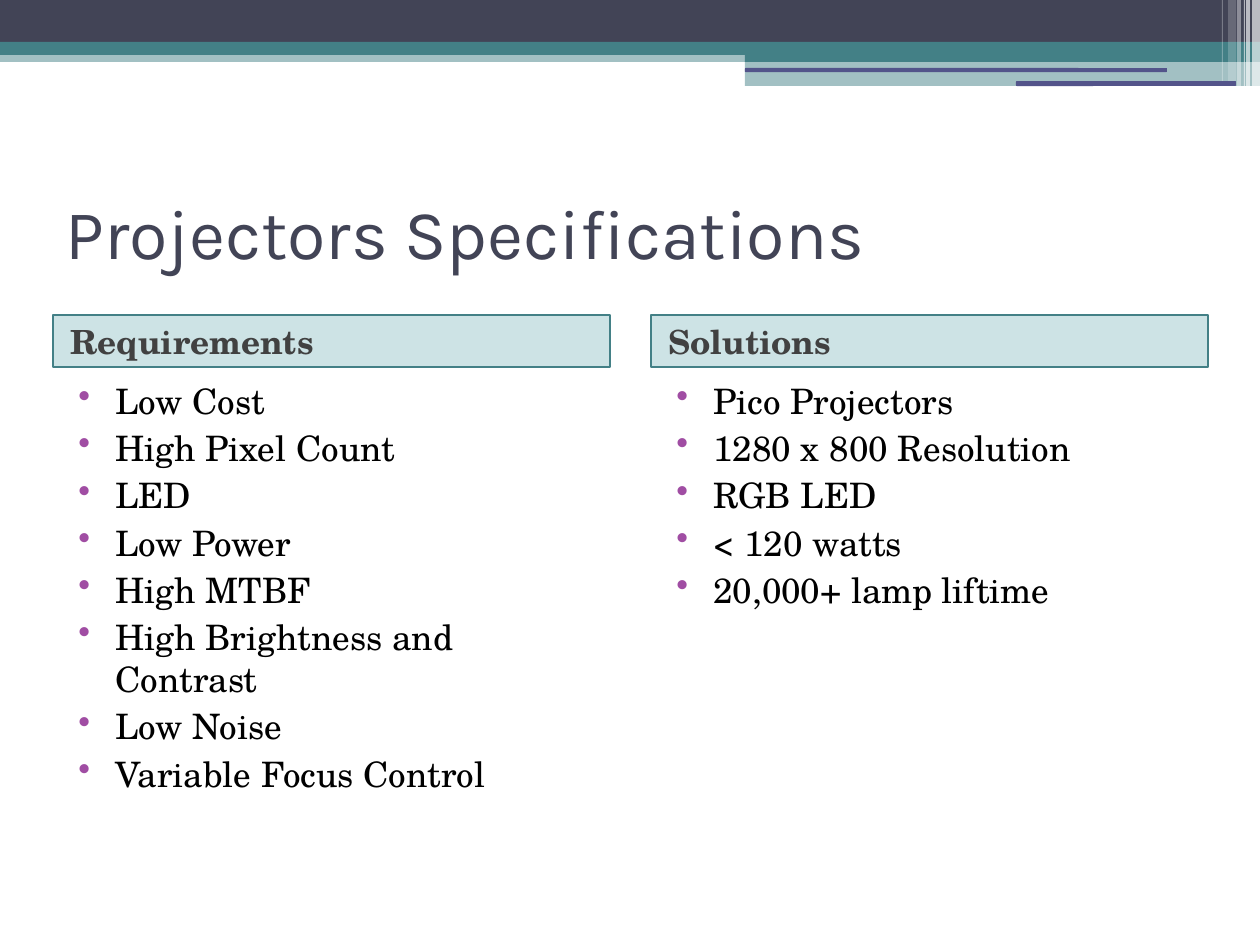
from dataclasses import dataclass

from lxml import etree
from pptx import Presentation, util as u
from pptx.dml.color import RGBColor
from pptx.enum import shapes, text
from pptx.oxml.ns import qn

PX = 914400 / 126
TEAL, NAVY, INDIGO, WHITE = "438086", "424456", "53548A", "FFFFFF"
SERIF = "TeX Gyre Schola"
COLUMN_W = 557


@dataclass
class Bar:
    x: int
    y: int
    w: int
    h: int
    color: str
    alpha: int = 100
    rounded: bool = False


@dataclass
class Column:
    x: int
    heading: str
    items: list[str]


@dataclass
class Style:
    size: int
    font: str
    color: str
    bold: bool = False


BARS = [
    Bar(0, 50, 1260, 12, TEAL, 49),
    Bar(0, 0, 1260, 43, NAVY),
    Bar(0, 42, 1260, 13, TEAL),
    Bar(745, 49, 515, 13, TEAL),
    Bar(745, 61, 515, 25, TEAL, 49),
    Bar(745, 68, 422, 4, INDIGO, rounded=True),
    Bar(1016, 81, 220, 5, INDIGO, rounded=True),
    Bar(1252, 0, 8, 86, WHITE, 64),
    Bar(1246, 0, 4, 86, WHITE, 64),
    Bar(1244, 0, 1, 86, WHITE, 60),
    Bar(1237, 0, 4, 86, WHITE, 40),
    Bar(1228, 0, 8, 81, WHITE, 20),
    Bar(1222, 0, 1, 81, WHITE, 29),
]

COLUMNS = [
    Column(53, "Requirements", [
        "Low Cost", "High Pixel Count", "LED", "Low Power", "High MTBF",
        "High Brightness and Contrast", "Low Noise", "Variable Focus Control",
    ]),
    Column(651, "Solutions", [
        "Pico Projectors", "1280 x 800 Resolution", "RGB LED",
        "< 120 watts", "20,000+ lamp liftime",
    ]),
]

TITLE = Style(40, "Karla", NAVY)
HEADING = Style(19, SERIF, "414141", True)
ITEM = Style(20, SERIF, "000000")


def px(n: int) -> u.Emu:
    return u.Emu(round(n * PX))


def rgb(color: str) -> RGBColor:
    return RGBColor.from_string(color)


def add_bar(s, bar: Bar):
    kind = shapes.MSO_SHAPE.ROUNDED_RECTANGLE if bar.rounded else shapes.MSO_SHAPE.RECTANGLE
    sp = s.shapes.add_shape(kind, px(bar.x), px(bar.y), px(bar.w), px(bar.h))
    sp.shadow.inherit = False
    sp.fill.solid()
    sp.fill.fore_color.rgb = rgb(bar.color)
    sp.line.fill.background()
    if bar.alpha < 100:
        clr = sp._element.spPr.find(f"{qn('a:solidFill')}/{qn('a:srgbClr')}")
        etree.SubElement(clr, qn("a:alpha"), val=str(bar.alpha * 1000))
    if bar.rounded:
        sp.adjustments[0] = 0.17
    return sp


def add_box(s, x: int, y: int, w: int, h: int):
    return s.shapes.add_textbox(px(x), px(y), px(w), px(h))


def write(sp, lines: list[str], style: Style, anchor=text.MSO_ANCHOR.TOP) -> list:
    tf = sp.text_frame
    tf.word_wrap = True
    tf.vertical_anchor = anchor
    tf.text = "\n".join(lines)
    for p in tf.paragraphs:
        p.alignment = text.PP_ALIGN.LEFT
        for r in p.runs:
            r.font.size = u.Pt(style.size)
            r.font.name = style.font
            r.font.bold = style.bold
            r.font.color.rgb = rgb(style.color)
    return list(tf.paragraphs)


def indent(p, margin: int, first: int) -> None:
    p.space_before = u.Pt(3)
    pPr = p._p.get_or_add_pPr()
    pPr.set("marL", str(px(margin)))
    pPr.set("indent", str(px(first)))


def add_bullet(p, color: str) -> None:
    pPr = p._p.get_or_add_pPr()
    clr = etree.SubElement(pPr, qn("a:buClr"))
    etree.SubElement(clr, qn("a:srgbClr"), val=color)
    etree.SubElement(pPr, qn("a:buChar"), char="•")


def add_column(s, col: Column) -> None:
    sp = add_bar(s, Bar(col.x, 315, COLUMN_W, 52, "328D96", 24))
    sp.line.color.rgb = rgb(TEAL)
    sp.line.width = u.Pt(1)
    for p in write(sp, [col.heading], HEADING, text.MSO_ANCHOR.MIDDLE):
        indent(p, 6, -1)
    for p in write(add_box(s, col.x, 373, COLUMN_W, 535), col.items, ITEM):
        indent(p, 50, -37)
        add_bullet(p, "A04DA3")


def main() -> None:
    prs = Presentation()
    prs.slide_width, prs.slide_height = px(1260), px(945)
    s = prs.slides.add_slide(prs.slide_layouts[6])
    for bar in BARS:
        add_bar(s, bar)
    write(add_box(s, 53, 158, 1155, 147), ["Projectors Specifications"],
          TITLE, text.MSO_ANCHOR.MIDDLE)
    for col in COLUMNS:
        add_column(s, col)
    prs.save("out.pptx")


if __name__ == "__main__":
    main()
